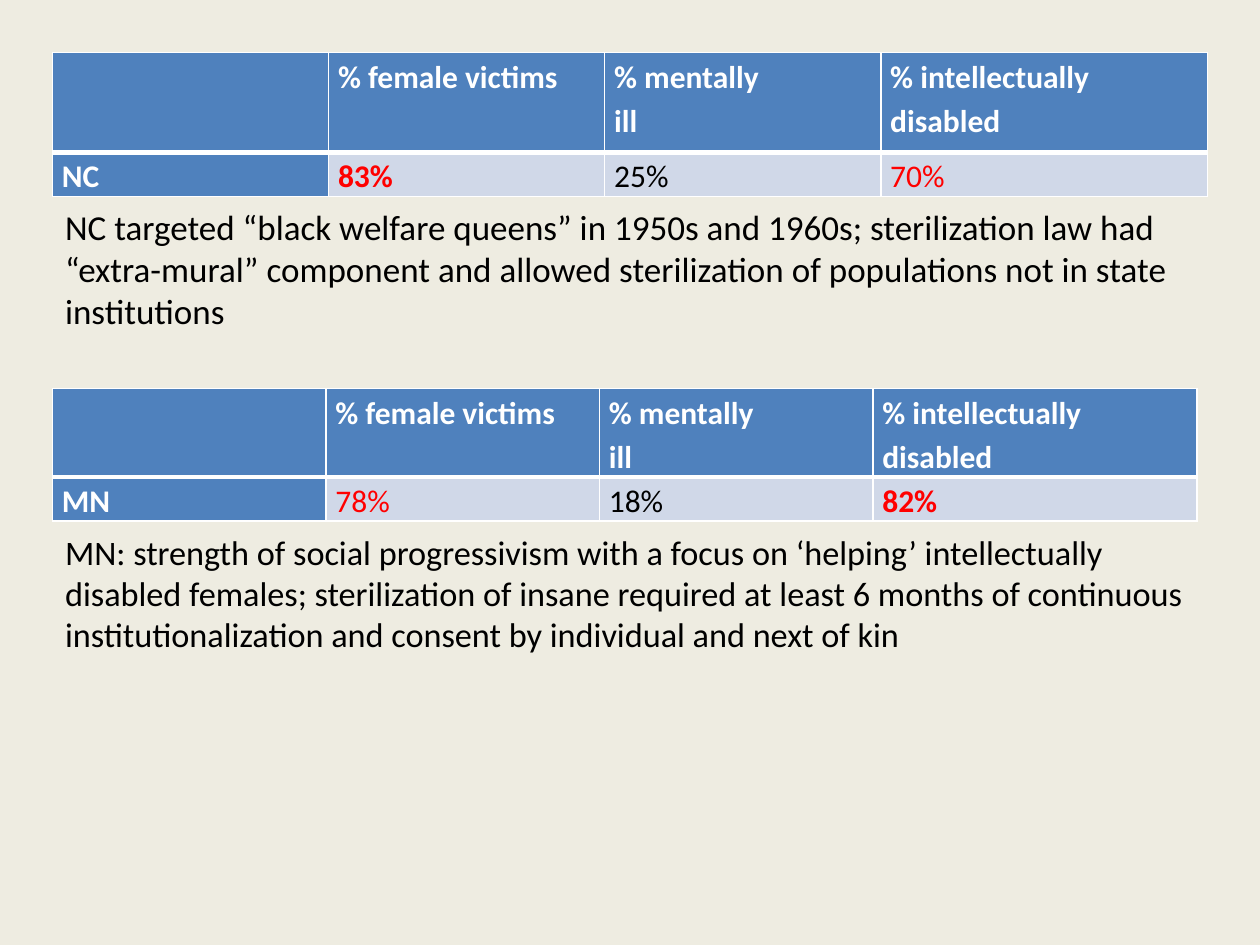
from lxml import etree
from pptx import Presentation
from pptx.dml.color import RGBColor
from pptx.enum.text import MSO_ANCHOR, MSO_AUTO_SIZE
from pptx.oxml.ns import qn
from pptx.util import Pt

TOP = MSO_ANCHOR.TOP
NO_AUTOFIT = MSO_AUTO_SIZE.NONE

BACKGROUND = RGBColor(0xEE, 0xEC, 0xE1)
BLUE = RGBColor(0x4F, 0x81, 0xBD)
PALE = RGBColor(0xD0, 0xD8, 0xE8)
WHITE = RGBColor(0xFF, 0xFF, 0xFF)
BLACK = RGBColor(0, 0, 0)
RED = RGBColor(0xFF, 0, 0)

HEADERS = ["", "% female victims", "% mentally\nill", "% intellectually\ndisabled"]


class SlideBuilder:
    font = "Calibri"

    def __init__(self, slide):
        self.slide = slide
        fill = slide.background.fill
        fill.solid()
        fill.fore_color.rgb = BACKGROUND

    def run(self, p, text, size, color, bold=False):
        r = p.add_run()
        r.text = text
        r.font.name = self.font
        r.font.size = Pt(size)
        r.font.bold = bold
        r.font.color.rgb = color

    def body(self, sp, left, top, width, height, text, size):
        sp.left, sp.top, sp.width, sp.height = map(Pt, (left, top, width, height))
        tf = sp.text_frame
        tf.auto_size = NO_AUTOFIT
        tf.vertical_anchor = TOP
        p = tf.paragraphs[0]
        pPr = p._p.get_or_add_pPr()
        pPr.set("marL", "0")
        pPr.set("indent", "0")
        etree.SubElement(pPr, qn("a:buNone"))
        self.run(p, text, size, BLACK)

    def border(self, cell, side, width):
        tcPr = cell._tc.get_or_add_tcPr()
        ln = etree.SubElement(tcPr, qn(f"a:ln{side}"), w=str(Pt(width)))
        fill = etree.SubElement(ln, qn("a:solidFill"))
        etree.SubElement(fill, qn("a:srgbClr"), val=str(WHITE))

    def cell(self, cell, text, fill, color, bold, thick_side):
        cell.margin_left = cell.margin_right = Pt(5.4)
        cell.margin_top = cell.margin_bottom = 0
        for side in "LRTB":
            self.border(cell, side, 3 if side == thick_side else 1)
        cell.fill.solid()
        cell.fill.fore_color.rgb = fill
        tf = cell.text_frame
        for i, line in enumerate(text.split("\n")):
            p = tf.add_paragraph() if i else tf.paragraphs[0]
            p.line_spacing = 1.15
            if line:
                self.run(p, line, 18, color, bold)

    def table(self, left, top, widths, heights, state, values):
        frame = self.slide.shapes.add_table(
            2, len(widths), Pt(left), Pt(top), Pt(sum(widths)), Pt(sum(heights)))
        table = frame.table
        for column, width in zip(table.columns, widths):
            column.width = Pt(width)
        for row, height in zip(table.rows, heights):
            row.height = Pt(height)
        for c, text in enumerate(HEADERS):
            self.cell(table.cell(0, c), text, BLUE, WHITE, True, "B")
        self.cell(table.cell(1, 0), state, BLUE, WHITE, True, "T")
        for c, (text, color, bold) in enumerate(values, 1):
            self.cell(table.cell(1, c), text, PALE, color, bold, "T")


def main():
    prs = Presentation()
    prs.slide_width, prs.slide_height = Pt(720), Pt(540)
    s = prs.slides.add_slide(prs.slide_layouts[3])
    title, nc_note, mn_note = s.placeholders
    title._element.getparent().remove(title._element)

    b = SlideBuilder(s)
    b.body(nc_note, 30, 114, 654, 84,
           "NC targeted “black welfare queens” in 1950s and 1960s; sterilization law had "
           "“extra-mural” component and allowed sterilization of populations not in state "
           "institutions", 20)
    b.body(mn_note, 30, 300, 660, 86.4,
           "MN: strength of social progressivism with a focus on ‘helping’ intellectually "
           "disabled females; sterilization of insane required at least 6 months of continuous "
           "institutionalization and consent by individual and next of kin", 19.6)
    b.table(30, 30, [157.8] * 3 + [186.6], [57, 24.5], "NC",
            [("83%", RED, True), ("25%", BLACK, False), ("70%", RED, False)])
    b.table(30, 222, [156.3] * 3 + [185.1], [50, 24.5], "MN",
            [("78%", RED, False), ("18%", BLACK, False), ("82%", RED, True)])
    prs.save("out.pptx")


if __name__ == "__main__":
    main()
